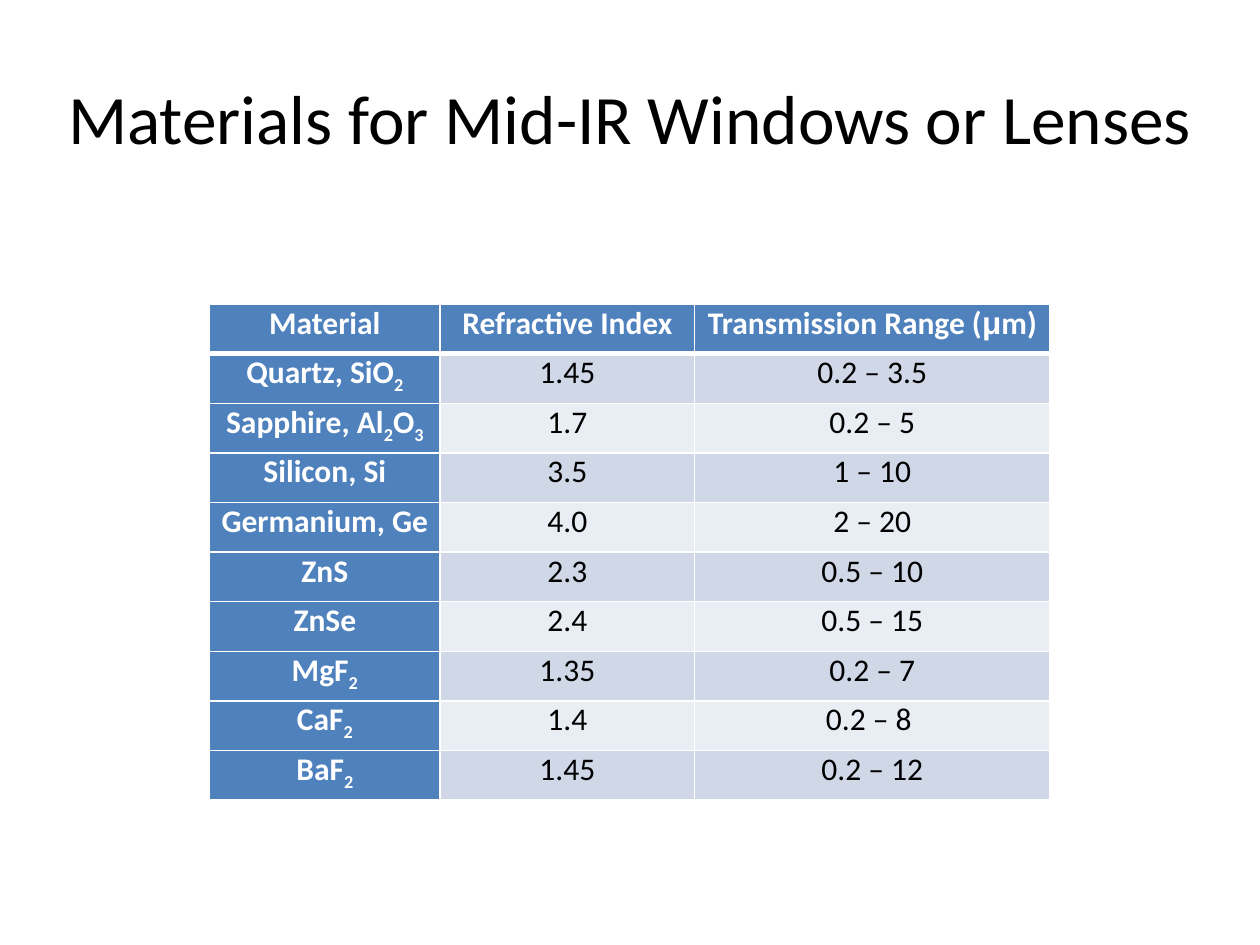
import itertools

import lxml.etree
import pptx
import pptx.dml.color
import pptx.enum.text
import pptx.oxml.ns
import pptx.util

Pt = pptx.util.Pt
RGB = pptx.dml.color.RGBColor.from_string
CENTER = pptx.enum.text.PP_ALIGN.CENTER
MIDDLE = pptx.enum.text.MSO_ANCHOR.MIDDLE

THEME = {
    "font": "Calibri",
    "symbol_font": "Arial",
    "title_size": 39.6,
    "table_size": 18,
    "text": "000000",
    "light": "FFFFFF",
    "accent": "4F81BD",
    "bands": ("D0D8E8", "E9EDF4"),
    "border": 1,
    "header_border": 3,
}

MATERIALS = [
    ("Material", "Refractive Index", "Transmission Range (μm)"),
    ("Quartz, SiO2", "1.45", "0.2 – 3.5"),
    ("Sapphire, Al2O3", "1.7", "0.2 – 5"),
    ("Silicon, Si", "3.5", "1 – 10"),
    ("Germanium, Ge", "4.0", "2 – 20"),
    ("ZnS", "2.3", "0.5 – 10"),
    ("ZnSe", "2.4", "0.5 – 15"),
    ("MgF2", "1.35", "0.2 – 7"),
    ("CaF2", "1.4", "0.2 – 8 "),
    ("BaF2", "1.45", "0.2 – 12"),
]


def apply_format(target, values):
    for name, value in values.items():
        setattr(target, name, value)


class SlideBuilder:
    def __init__(self, slide, theme):
        self.slide = slide
        self.theme = theme

    def add_run(self, paragraph, text, size, color, bold=False, font="font"):
        run = paragraph.add_run()
        run.text = text
        apply_format(run.font, {"name": self.theme[font], "size": Pt(size), "bold": bold})
        run.font.color.rgb = RGB(self.theme[color])
        return run

    def title(self, text, left, top, width, height):
        shape = self.slide.shapes.title
        apply_format(shape, {"left": Pt(left), "top": Pt(top),
                             "width": Pt(width), "height": Pt(height)})
        apply_format(shape.text_frame, {"word_wrap": True, "vertical_anchor": MIDDLE})
        paragraph = shape.text_frame.paragraphs[0]
        paragraph.alignment = CENTER
        self.add_run(paragraph, text, self.theme["title_size"], "text")

    def border(self, cell, side, width):
        properties = cell._tc.get_or_add_tcPr()
        qn = pptx.oxml.ns.qn
        line = lxml.etree.SubElement(properties, qn("a:ln" + side), w=str(Pt(width)))
        fill = lxml.etree.SubElement(line, qn("a:solidFill"))
        lxml.etree.SubElement(fill, qn("a:srgbClr"), val=self.theme["light"])

    def cell_text(self, cell, text, strong, formula):
        paragraph = cell.text_frame.paragraphs[0]
        apply_format(paragraph, {"alignment": CENTER, "space_after": Pt(9)})

        def kind(character):
            if formula and character.isdigit():
                return "subscript"
            return "symbol" if character == "μ" else "plain"

        for style, characters in itertools.groupby(text, kind):
            run = self.add_run(paragraph, "".join(characters), self.theme["table_size"],
                               "light" if strong else "text", strong,
                               "symbol_font" if style == "symbol" else "font")
            if style == "subscript":
                run._r.get_or_add_rPr().set("baseline", "-25000")

    def table(self, rows, left, top, widths, row_height):
        frame = self.slide.shapes.add_table(len(rows), len(widths), Pt(left), Pt(top),
                                            Pt(sum(widths)), Pt(row_height * len(rows)))
        table = frame.table
        for column, width in zip(table.columns, widths):
            column.width = Pt(width)
        for row_index, row in enumerate(rows):
            table.rows[row_index].height = Pt(row_height)
            header_sides = {0: "B", 1: "T"}.get(row_index)
            for column_index, text in enumerate(row):
                cell = table.cell(row_index, column_index)
                apply_format(cell, {"margin_left": Pt(5), "margin_right": Pt(5),
                                    "margin_top": 0, "margin_bottom": 0})
                for side in "LRTB":
                    weight = "header_border" if side == header_sides else "border"
                    self.border(cell, side, self.theme[weight])
                strong = row_index == 0 or column_index == 0
                band = self.theme["bands"][(row_index - 1) % 2]
                cell.fill.solid()
                cell.fill.fore_color.rgb = RGB(self.theme["accent"] if strong else band)
                self.cell_text(cell, text, strong, column_index == 0)


def main():
    presentation = pptx.Presentation()
    apply_format(presentation, {"slide_width": Pt(720), "slide_height": Pt(540)})
    slide = presentation.slides.add_slide(presentation.slide_layouts[5])
    builder = SlideBuilder(slide, THEME)
    builder.title("Materials for Mid-IR Windows or Lenses", 25.5, 21.6, 669, 90)
    builder.table(MATERIALS, 119.75, 173.75, (131.75, 145.5, 203), 28.35)
    presentation.save("out.pptx")


if __name__ == "__main__":
    main()
